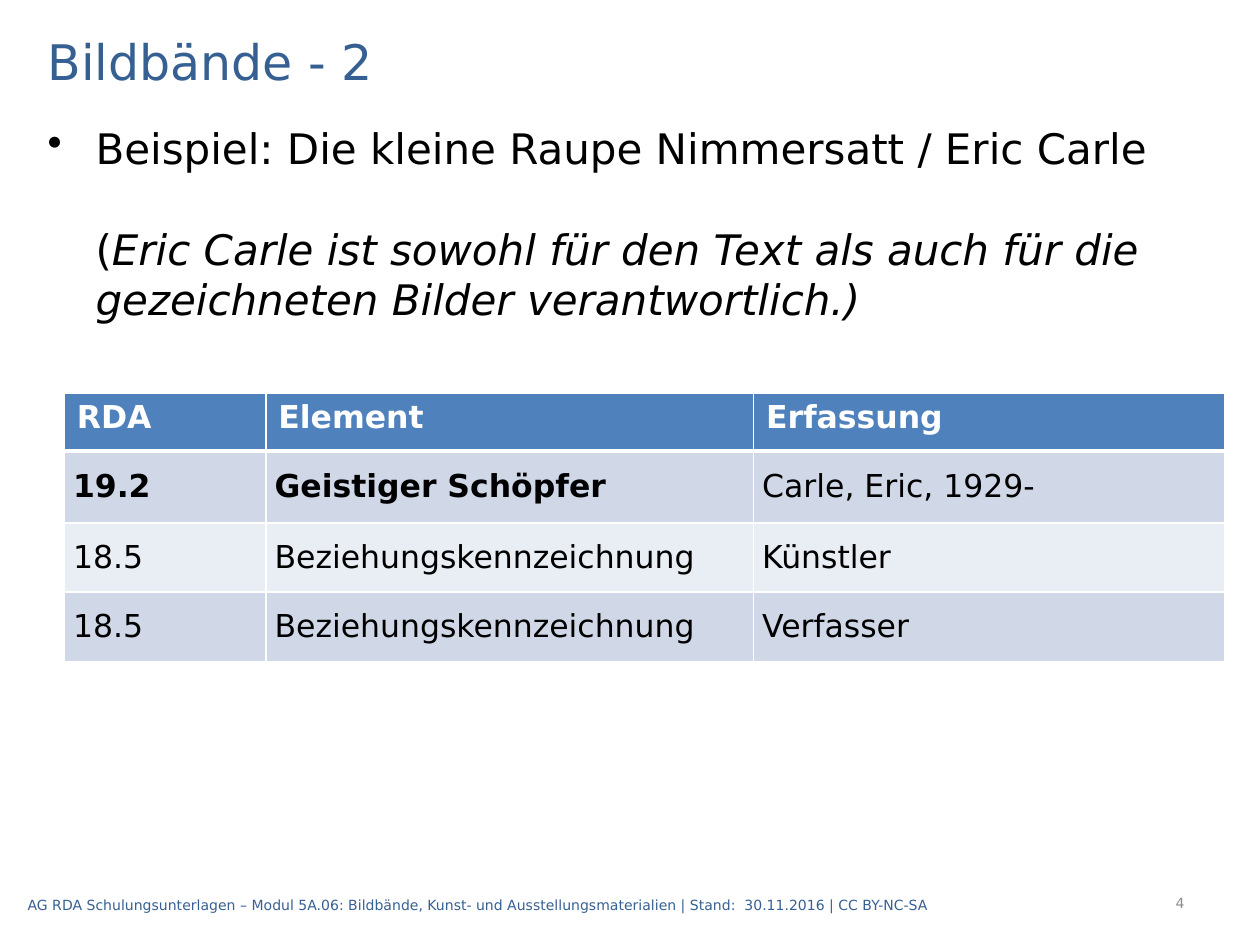
from lxml import etree
from pptx import Presentation
from pptx.dml.color import RGBColor
from pptx.enum.text import MSO_ANCHOR, PP_ALIGN
from pptx.oxml.ns import qn
from pptx.util import Inches, Pt

MIDDLE, TOP = MSO_ANCHOR.MIDDLE, MSO_ANCHOR.TOP
LEFT, RIGHT = PP_ALIGN.LEFT, PP_ALIGN.RIGHT
FONT = "DejaVu Sans"
BLUE, GREY, BLACK, WHITE = "376092", "8C8C8C", "000000", "FFFFFF"
HEADER_FILL, BAND_FILLS = "4F81BD", ("D0D8E8", "E9EDF4")


def add_span(para, text, size, color, bold=False, italic=False):
    span = para.add_run()
    span.text = text
    span.font.name = FONT
    span.font.size = Pt(size)
    span.font.bold = bold
    span.font.italic = italic
    span.font.color.rgb = RGBColor.from_string(color)


def add_box(left, top, width, height, anchor, align=LEFT):
    box = page.shapes.add_textbox(Inches(left), Inches(top), Inches(width), Inches(height))
    box.text_frame.word_wrap = True
    box.text_frame.vertical_anchor = anchor
    box.text_frame.paragraphs[0].alignment = align
    return box.text_frame


deck = Presentation()
deck.slide_width, deck.slide_height = Inches(10), Inches(7.5)
page = deck.slides.add_slide(deck.slide_layouts[6])

# Title
title = add_box(0.28, 0.2, 9.45, 0.56, MIDDLE)
add_span(title.paragraphs[0], "Bildbände - 2", 28, BLUE)

# Example with bullet, then the remark at the same indent
body = add_box(0.28, 0.92, 9.45, 2.1, TOP)
example = body.paragraphs[0]
add_span(example, "Beispiel: Die kleine Raupe Nimmersatt / Eric Carle", 24, BLACK)
remark = body.add_paragraph()
remark.space_before = Pt(29)
add_span(remark, "(", 24, BLACK)
add_span(remark, "Eric Carle ist sowohl für den Text als auch für die gezeichneten "
         "Bilder verantwortlich.)", 24, BLACK, italic=True)
for para, indent in ((example, -0.38), (remark, 0)):
    props = para._p.get_or_add_pPr()
    props.set("marL", str(Inches(0.38)))
    props.set("indent", str(Inches(indent)))
bullet = etree.SubElement(example._p.get_or_add_pPr(), qn("a:buChar"))
bullet.set("char", "•")

# Footer and page number
footer = add_box(0.12, 6.98, 9.21, 0.4, MIDDLE)
add_span(footer.paragraphs[0], "AG RDA Schulungsunterlagen – Modul 5A.06: Bildbände, Kunst- und "
         "Ausstellungsmaterialien | Stand:  30.11.2016 | CC BY-NC-SA", 8, BLUE)
number = add_box(7.91, 6.97, 1.59, 0.4, MIDDLE, RIGHT)
add_span(number.paragraphs[0], "4", 8, GREY)

# Table
rows = [
    ("RDA", "Element", "Erfassung"),
    ("19.2", "Geistiger Schöpfer", "Carle, Eric, 1929-"),
    ("18.5", "Beziehungskennzeichnung", "Künstler"),
    ("18.5", "Beziehungskennzeichnung", "Verfasser"),
]
table = page.shapes.add_table(len(rows), 3, Inches(0.51), Inches(3.12),
                              Inches(9.21), Inches(2.13)).table
for column, width in zip(table.columns, (1.6, 3.87, 3.74)):
    column.width = Inches(width)
for row, height in zip(table.rows, (0.46, 0.57, 0.55, 0.55)):
    row.height = Inches(height)

for r, texts in enumerate(rows):
    header = r == 0
    for c, text in enumerate(texts):
        cell = table.cell(r, c)
        para = cell.text_frame.paragraphs[0]
        add_span(para, text, 18, WHITE if header else BLACK, bold=header or (r == 1 and c < 2))
        if not header:
            para.space_after = Pt(6)
            cell.vertical_anchor = MIDDLE
            cell.margin_left = cell.margin_right = Inches(0.07)
            cell.margin_top = cell.margin_bottom = 0
        cell.fill.solid()
        cell.fill.fore_color.rgb = RGBColor.from_string(
            HEADER_FILL if header else BAND_FILLS[(r - 1) % 2])

        # White cell borders, thicker below the header
        thick_side = {0: "lnB", 1: "lnT"}.get(r)
        for place, side in enumerate(("lnL", "lnR", "lnT", "lnB")):
            line = etree.Element(qn("a:" + side), w=str(Pt(3 if side == thick_side else 1)))
            fill = etree.SubElement(line, qn("a:solidFill"))
            etree.SubElement(fill, qn("a:srgbClr"), val=WHITE)
            cell._tc.get_or_add_tcPr().insert(place, line)

deck.save("out.pptx")
